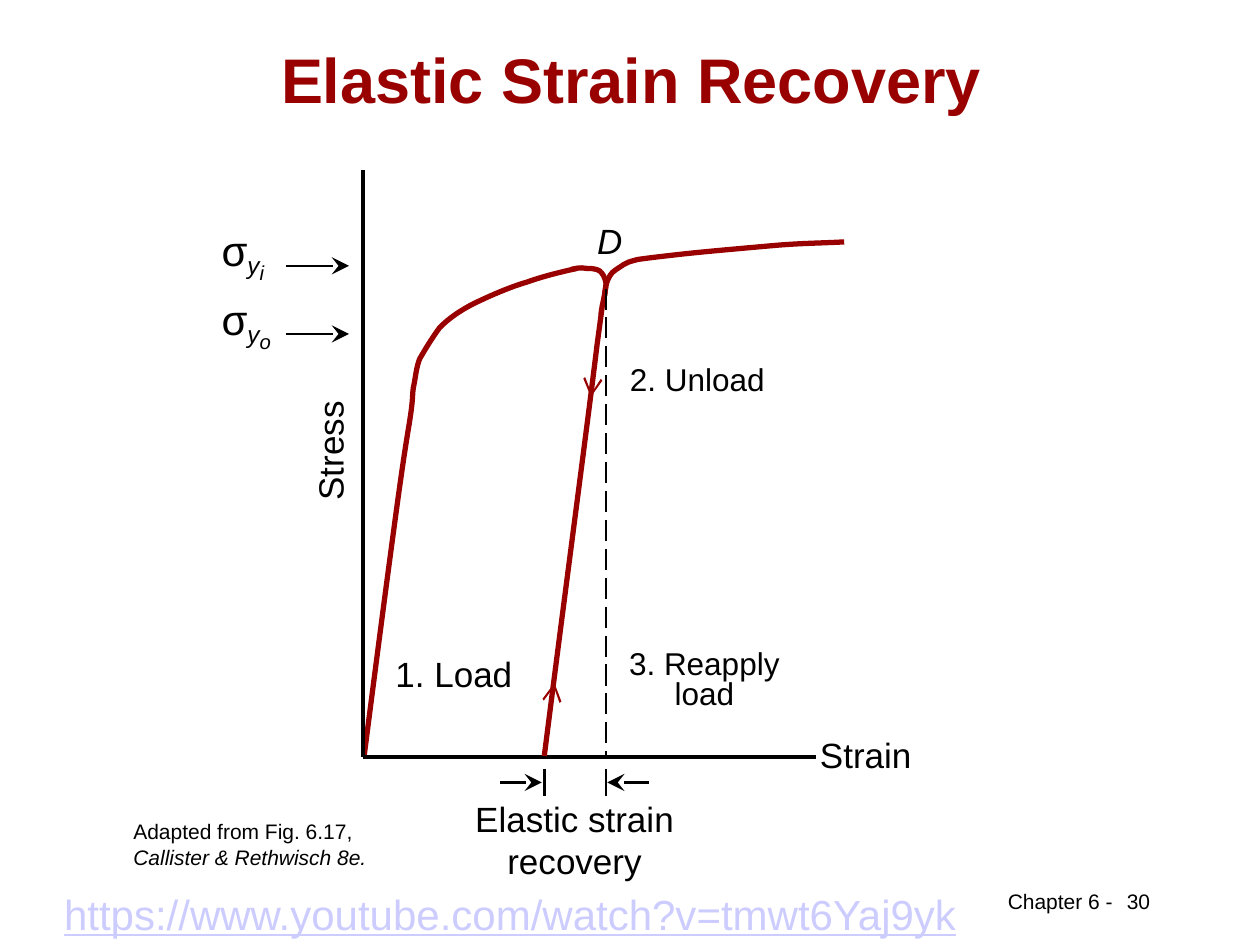
from lxml import etree
from pptx import Presentation
from pptx.dml.color import RGBColor
from pptx.enum.dml import MSO_LINE
from pptx.enum.shapes import MSO_CONNECTOR
from pptx.enum.text import MSO_ANCHOR, PP_ALIGN
from pptx.oxml.ns import qn
from pptx.util import Inches, Pt

STRAIGHT = MSO_CONNECTOR.STRAIGHT
DASH, LONG_DASH = MSO_LINE.DASH, MSO_LINE.LONG_DASH
LEFT, CENTER = PP_ALIGN.LEFT, PP_ALIGN.CENTER
TOP, MIDDLE = MSO_ANCHOR.TOP, MSO_ANCHOR.MIDDLE
COLORS = {"ink": "000000", "curve": "990000", "link": "CCCCFF"}
COLUMNS, ROWS = 100, 75

LOADING = [
    (28.9, 60), (29.8, 53), (30.7, 46.1), (31.3, 41.7), (31.9, 37.2), (32.2, 35.3),
    (32.5, 33.5), (32.8, 31.6), (32.7, 31.6), (32.8, 30.8), (33, 29.9), (33, 29.3),
    (33.3, 28.5), (33.7, 27.8), (34.3, 26.8), (34.9, 26), (35.6, 25.3), (36.3, 24.8),
    (37.4, 24.2), (38.6, 23.6), (40.4, 22.8), (41.8, 22.4), (43.2, 21.9), (44.5, 21.6),
    (45.8, 21.3),
]
RELOADING = [
    (48, 23.5), (48, 23), (48.1, 22.4), (48.4, 21.9), (48.6, 21.5), (49.1, 21.3),
    (49.5, 21), (49.8, 20.8), (49.9, 20.8), (50.6, 20.6), (51.3, 20.5), (52.1, 20.4),
    (53.9, 20.2), (55.6, 20), (59.1, 19.7), (61.3, 19.5), (63.5, 19.3), (65.3, 19.3),
    (67, 19.2),
]
UNLOADING = [
    (45.3, 21.4), (45.7, 21.3), (46.1, 21.2), (46.5, 21.3), (46.8, 21.3), (47.3, 21.3),
    (47.6, 21.5), (47.8, 21.7), (48, 21.9), (48.1, 22.5), (48.1, 23.1), (47.8, 24.1),
    (47.7, 24.9), (47.6, 25.7), (48.2, 21.4), (47.4, 27.3), (46.7, 33.1), (44.9, 46.6),
    (43.2, 60),
]


def write(paragraph, text, size=20, color="ink", bold=False, italic=False,
          underline=False, baseline=0):
    """Append one formatted run to a paragraph."""
    run = paragraph.add_run()
    run.text = text
    font = run.font
    font.name, font.size = "Arial", Pt(size)
    font.bold, font.italic, font.underline = bold, italic, underline
    font.color.rgb = RGBColor.from_string(COLORS[color])
    if baseline:
        run._r.get_or_add_rPr().set("baseline", str(baseline * 1000))


class Canvas:
    """Holds the style, the grid and the current slide."""

    def __init__(self, presentation):
        """Add a blank slide and measure its grid."""
        self.slide = presentation.slides.add_slide(presentation.slide_layouts[6])
        self.column = presentation.slide_width / COLUMNS
        self.row = presentation.slide_height / ROWS

    def place(self, column, row):
        """Turn a grid position into slide lengths."""
        return round(column * self.column), round(row * self.row)

    def style_line(self, line, color, width, dash=None):
        """Set the colour, width and dash of a line."""
        line.color.rgb = RGBColor.from_string(COLORS[color])
        line.width = Pt(width)
        if dash:
            line.dash_style = dash

    def text(self, at, *lines, align=LEFT, anchor=TOP, wrap=False, spacing=None,
             rotation=0, **style):
        """Add a text box; a line is a string or a list of (text, format) pairs."""
        column, row, width, height = at
        box = self.slide.shapes.add_textbox(*self.place(column, row),
                                            *self.place(width, height))
        box.rotation = rotation
        frame = box.text_frame
        frame.word_wrap, frame.vertical_anchor = wrap, anchor
        for index, line in enumerate(lines):
            paragraph = frame.add_paragraph() if index else frame.paragraphs[0]
            paragraph.alignment, paragraph.line_spacing = align, spacing
            for words, extra in [(line, {})] if isinstance(line, str) else line:
                write(paragraph, words, **{**style, **extra})

    def line(self, start, end, color="ink", width=1.5, dash=None, arrow=None):
        """Add a straight line with an optional arrowhead at its end."""
        connector = self.slide.shapes.add_connector(
            STRAIGHT, *self.place(*start), *self.place(*end))
        self.style_line(connector.line, color, width, dash)
        if arrow:
            outline = connector.line._get_or_add_ln()
            etree.SubElement(outline, qn("a:tailEnd"), type=arrow, w="lg", len="lg")
        etree.SubElement(connector._element.spPr, qn("a:effectLst"))

    def curve(self, knots):
        """Add an open curve whose segments are cubic."""
        builder = self.slide.shapes.build_freeform(*self.place(*knots[0]))
        builder.add_line_segments([self.place(*knot) for knot in knots[1:]], close=False)
        shape = builder.convert_to_shape()
        segments = list(shape._element.iter(qn("a:lnTo")))
        for first in range(0, len(segments), 3):
            cubic = etree.Element(qn("a:cubicBezTo"))
            segments[first].addprevious(cubic)
            for segment in segments[first:first + 3]:
                cubic.append(segment[0])
                segment.getparent().remove(segment)
        shape.shadow.inherit = False
        shape.fill.background()
        self.style_line(shape.line, "curve", 3)

    def yield_stress(self, arrow_row, text_row, width, subscript):
        """Add a yield stress symbol and the arrow that points at its level."""
        self.line((22.7, arrow_row), (27.7, arrow_row), arrow="stealth")
        symbol = [("σ", {}), ("y", {"italic": True, "baseline": -20}),
                  (subscript, {"italic": True, "size": 20, "baseline": -40})]
        self.text((16.6, text_row, width, 5), symbol, size=24)


def main():
    """Build the elastic strain recovery slide."""
    presentation = Presentation()
    presentation.slide_width, presentation.slide_height = Inches(10), Inches(7.5)
    canvas = Canvas(presentation)

    canvas.text((79, 70, 10.4, 3), "Chapter 6 -", size=12)
    canvas.text((83.9, 70, 12.9, 3.9), "30", size=12, align=CENTER, wrap=True)
    canvas.text((7.6, 3.3, 85, 5.8), "Elastic Strain Recovery", size=36, color="curve",
                bold=True, align=CENTER, anchor=MIDDLE, wrap=True)
    canvas.text((9.6, 64.5, 22.5, 5), [("Adapted from Fig. 6.17, ", {}),
                ("Callister & Rethwisch 8e.", {"italic": True})], size=12, wrap=True)

    canvas.curve(LOADING)
    origin = (28.8, 60.1)
    for axis_start, axis_end in (((28.8, 13.5), origin), (origin, (64.8, 60.1))):
        canvas.line(axis_start, axis_end, width=2.25)
    canvas.curve(RELOADING)
    canvas.line((43.6, 57), (44, 54.2), "curve", 1.25, DASH, "arrow")
    canvas.curve(UNLOADING)
    canvas.line((47.2, 28.8), (46.9, 31.5), "curve", 1.25, DASH, "arrow")

    canvas.text((21.2, 33.6, 9.9, 4.3), "Stress", rotation=270)
    canvas.text((64.1, 57.7, 9.3, 4.3), "Strain")
    canvas.text((48.9, 51.2, 14, 5.8), "3. Reapply", "load", size=18, align=CENTER,
                spacing=0.8)
    canvas.text((49, 28.7, 12.7, 3.4), "2. Unload", size=18, align=CENTER, spacing=0.8)
    canvas.text((46.4, 16.9, 4, 4.3), "D", italic=True)

    canvas.line((48.1, 22.9), (48.1, 60), dash=LONG_DASH)
    canvas.text((36.7, 62.8, 17.8, 7.7), "Elastic strain", "recovery", align=CENTER)
    for outside, limit in ((39.7, 43), (51.5, 48.2)):
        canvas.line((outside, 62.1), (limit, 62.1), arrow="stealth")
    for limit in (43.2, 48.1):
        canvas.line((limit, 61), (limit, 63.2))
    canvas.text((30.4, 51.3, 11.3, 4.3), "1. Load")

    canvas.yield_stress(26.5, 22.8, 6.1, "o")
    canvas.yield_stress(21.1, 17.3, 5.5, "i")
    canvas.text((4.1, 70, 76.9, 9.1), "https://www.youtube.com/watch?v=tmwt6Yaj9yk",
                size=24, color="link", underline=True, wrap=True)
    presentation.save("out.pptx")


if __name__ == "__main__":
    main()
